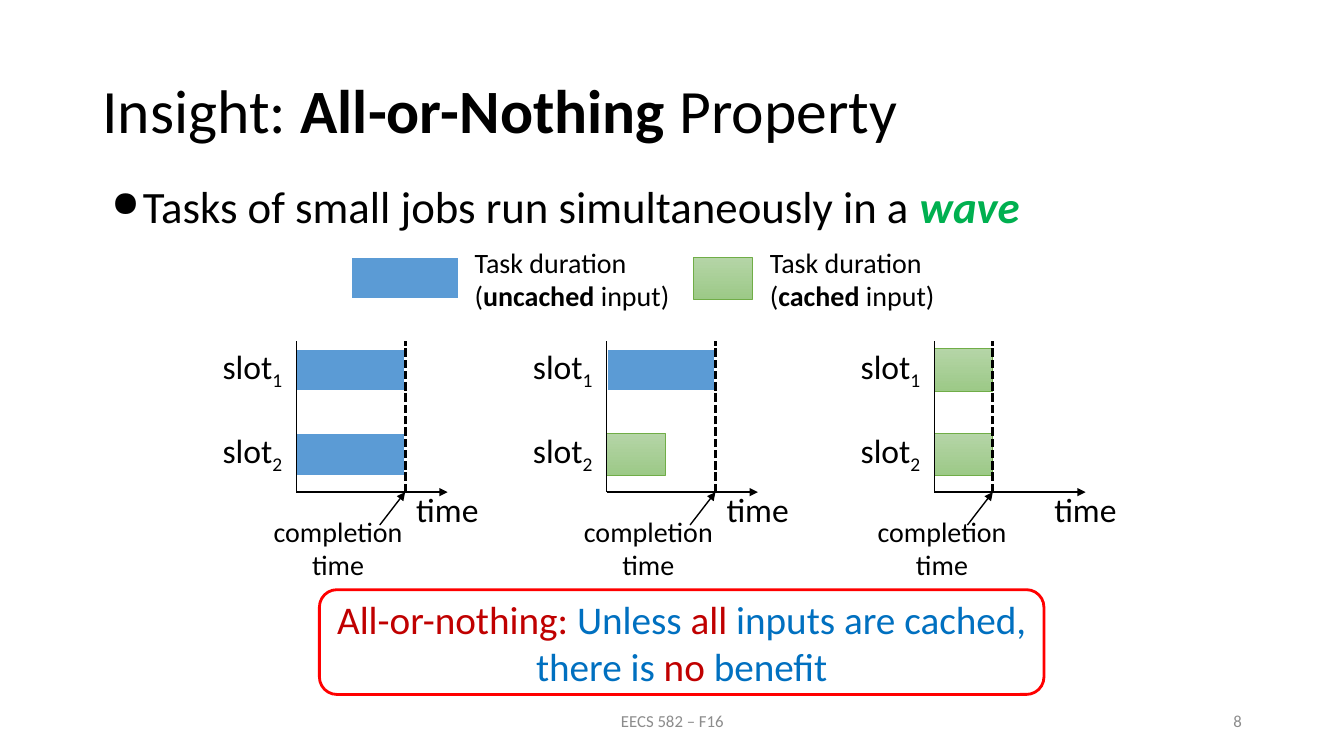
from lxml import etree
from pptx import Presentation
from pptx.dml.color import RGBColor
from pptx.enum.dml import MSO_LINE
from pptx.enum.shapes import MSO_CONNECTOR, MSO_SHAPE
from pptx.enum.text import MSO_ANCHOR, MSO_AUTO_SIZE, PP_ALIGN
from pptx.oxml.ns import qn
from pptx.util import Cm, Pt

LEFT, CENTER, RIGHT = PP_ALIGN.LEFT, PP_ALIGN.CENTER, PP_ALIGN.RIGHT
TOP, MIDDLE = MSO_ANCHOR.TOP, MSO_ANCHOR.MIDDLE
RECT, ROUND_RECT = MSO_SHAPE.RECTANGLE, MSO_SHAPE.ROUNDED_RECTANGLE
STRAIGHT, DASH = MSO_CONNECTOR.STRAIGHT, MSO_LINE.SQUARE_DOT
FIT, FIXED = MSO_AUTO_SIZE.SHAPE_TO_FIT_TEXT, MSO_AUTO_SIZE.NONE

BLACK, WHITE, GREY = "000000", "FFFFFF", "8C8C8C"
GREEN, RED, DARK_RED, BLUE = "00B050", "FF0000", "C00000", "0070C0"
BAR_BLUE, BAR_EDGE = "5B9BD5", "70AD47"
BAR_GREENS = ("B5D5A7", "9CC987")

BAR_H = 1.07
UNCACHED_W, CACHED_W = 2.74, 1.47
AXIS_TOP, AXIS_Y, AXIS_W = 8.59, 12.4, 3.81
FIRST_SLOT_Y, SLOT_STEP = 8.79, 2.13


def rgb(value):
    return RGBColor.from_string(value)


class SlideBuilder:
    font = "Calibri"

    def __init__(self, prs):
        self.slide = prs.slides.add_slide(prs.slide_layouts[5])
        self.shapes = self.slide.shapes

    def fill_text(self, sp, paragraphs, size, color=BLACK, align=LEFT,
                  anchor=TOP, wrap=True, spacing=None):
        """Write paragraphs, each a list of (text, run format) pairs."""
        tf = sp.text_frame
        frame_format = {"word_wrap": wrap, "vertical_anchor": anchor,
                        "auto_size": FIXED if wrap else FIT}
        for name, value in frame_format.items():
            setattr(tf, name, value)
        for i, runs in enumerate(paragraphs):
            p = tf.add_paragraph() if i else tf.paragraphs[0]
            p.alignment = align
            if spacing:
                p.line_spacing = spacing
            for text, changes in runs:
                r = p.add_run()
                r.text = text
                run_format = {"name": self.font, "size": Pt(size), "bold": False}
                run_format.update(changes)
                r.font.color.rgb = rgb(run_format.pop("color", color))
                baseline = run_format.pop("baseline", None)
                if baseline:
                    r.font._element.set("baseline", str(baseline))
                for name, value in run_format.items():
                    setattr(r.font, name, value)
        return tf

    def title(self, box, runs):
        sp = self.shapes.title
        for name, value in zip(("left", "top", "width", "height"), box):
            setattr(sp, name, Cm(value))
        self.fill_text(sp, [runs], 44, anchor=MIDDLE, spacing=0.9)

    def text(self, box, paragraphs, size, **style):
        sp = self.shapes.add_textbox(*map(Cm, box))
        return self.fill_text(sp, paragraphs, size, **style)

    def bullet(self, box, runs, size):
        p = self.text(box, [runs], size, spacing=0.9).paragraphs[0]
        p.space_before = Pt(6)
        pPr = p._p.get_or_add_pPr()
        pPr.set("marL", str(Cm(1.02)))
        pPr.set("indent", str(Cm(-0.79)))
        etree.SubElement(pPr, qn("a:buSzPct")).set("val", "80000")
        etree.SubElement(pPr, qn("a:buChar")).set("char", "●")

    def shape(self, kind, box, line, width):
        sp = self.shapes.add_shape(kind, *map(Cm, box))
        sp.shadow.inherit = False
        sp.line.color.rgb = rgb(line)
        sp.line.width = Pt(width)
        return sp

    def bar(self, x, y, cached):
        if cached:
            sp = self.shape(RECT, (x, y, CACHED_W, BAR_H), BAR_EDGE, 0.5)
            sp.fill.gradient()
            sp.fill.gradient_angle = 270
            for stop, color in zip(sp.fill.gradient_stops, BAR_GREENS):
                stop.color.rgb = rgb(color)
        else:
            sp = self.shape(RECT, (x, y, UNCACHED_W, BAR_H), WHITE, 1.5)
            sp.fill.solid()
            sp.fill.fore_color.rgb = rgb(BAR_BLUE)

    def line(self, start, end, width=1, dash=None, arrow=False):
        sp = self.shapes.add_connector(STRAIGHT, *map(Cm, start + end))
        sp.line.color.rgb = rgb(BLACK)
        sp.line.width = Pt(width)
        if dash:
            sp.line.dash_style = dash
        if arrow:
            ln = sp.line._get_or_add_ln()
            etree.SubElement(ln, qn("a:tailEnd")).set("type", "triangle")
        etree.SubElement(sp._element.spPr, qn("a:effectLst"))

    def timeline(self, x, slots_cached, label_shift):
        """Draw two slots on a time axis, ending with the slower task."""
        end = x + (CACHED_W if all(slots_cached) else UNCACHED_W)
        for i, cached in enumerate(slots_cached):
            y = FIRST_SLOT_Y + i * SLOT_STEP
            self.bar(x, y, cached)
            runs = [("slot", {}), (str(i + 1), {"baseline": -25000})]
            self.text((x - 2.11, y - 0.21, 2.06, 1.27), [runs], 24, wrap=False)
        self.text((x + 2.77, 12.19, 2.11, 1.27), [[("time", {})]], 24, wrap=False)
        self.text((x + label_shift, 12.83, 3.78, 1.96),
                  [[("completion ", {})], [("time", {})]], 20,
                  align=CENTER, wrap=False)
        self.line((end - 0.64, 13.23), (end, AXIS_Y), arrow=True)
        self.line((x, AXIS_Y), (x, AXIS_TOP))
        self.line((x, AXIS_Y), (x + AXIS_W, AXIS_Y), arrow=True)
        self.line((end, AXIS_Y), (end, AXIS_TOP), width=2, dash=DASH)

    def legend(self, bar_x, bar_y, text_x, text_w, word, cached):
        self.bar(bar_x, bar_y, cached)
        self.text((text_x, 6.05, text_w, 1.96),
                  [[("Task duration", {})],
                   [("(", {}), (word, {"bold": True}), (" input)", {})]],
                  20, wrap=False)

    def callout(self, box, runs):
        sp = self.shape(ROUND_RECT, box, RED, 2)
        sp.fill.background()
        self.fill_text(sp, [runs], 28, BLUE, CENTER, MIDDLE)


def main():
    prs = Presentation()
    prs.slide_width, prs.slide_height = Cm(33.87), Cm(19.05)
    s = SlideBuilder(prs)

    s.title((2.33, 1.01, 29.21, 3.68),
            [("Insight: ", {}), ("All-or-Nothing", {"bold": True}),
             (" Property", {})])
    s.bullet((2.33, 4.52, 23.98, 1.6),
             [("Tasks of small jobs run simultaneously in a ", {}),
              ("wave", {"color": GREEN, "bold": True, "italic": True})], 32)

    s.legend(8.84, 6.48, 11.71, 5.46, "uncached", False)
    s.legend(17.48, 6.48, 19.15, 4.7, "cached", True)

    for x, slots_cached, label_shift in (
            (7.47, (False, False), -0.84),
            (15.29, (False, True), -0.84),
            (23.55, (True, True), -1.7)):
        s.timeline(x, slots_cached, label_shift)

    stress = {"color": DARK_RED}
    s.callout((8.05, 14.86, 18.26, 2.64),
              [("All-or-nothing: ", stress), ("Unless ", {}), ("all", stress),
               (" inputs are cached, there is ", {}), ("no", stress),
               (" benefit", {})])

    for box, text, align in (
            ((11.23, 17.65, 11.43, 1.02), "EECS 582 – F16", CENTER),
            ((23.93, 17.65, 7.62, 1.02), "8", RIGHT)):
        s.text(box, [[(text, {})]], 12, color=GREY, align=align, anchor=MIDDLE)

    prs.save("out.pptx")


if __name__ == "__main__":
    main()
